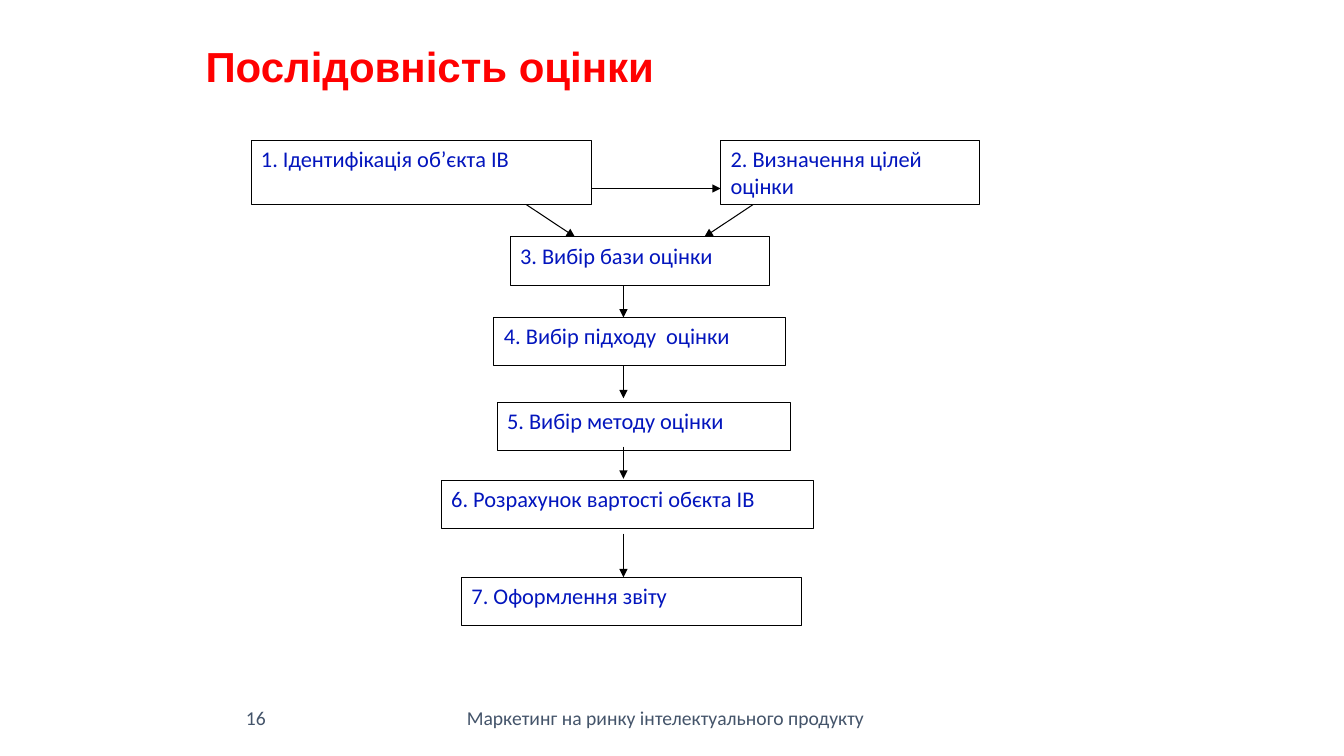
import pptx
import pptx.util
import pptx.dml.color
import pptx.enum.shapes
import pptx.enum.text
import pptx.oxml.ns
import lxml.etree

Inches, Pt = pptx.util.Inches, pptx.util.Pt
ALIGN = pptx.enum.text.PP_ALIGN
ANCHOR = pptx.enum.text.MSO_ANCHOR

WIDTH, HEIGHT = 13.33, 7.5
COL, ROW = WIDTH / 83, 0.16      # flowchart grid
LEFT, TOP = 2.49, 1.39           # its origin
BLACK, WHITE, RED, BLUE, SLATE = "000000", "FFFFFF", "FF0000", "0315BD", "44546A"

TITLE = "Послідовність оцінки"
FOOTER = "Маркетинг на ринку інтелектуального продукту"
PAGE = "16"

# text, column, row, columns wide, rows high
STEPS = [
    ("1. Ідентифікація об’єкта ІВ", 0, 0, 21, 4),
    ("2. Визначення цілей оцінки", 29, 0, 16, 4),
    ("3. Вибір бази оцінки", 16, 6, 16, 3),
    ("4. Вибір підходу  оцінки", 15, 11, 18, 3),
    ("5. Вибір методу оцінки", 15.2, 16.25, 18.1, 3),
    ("6. Розрахунок вартості обєкта ІВ", 11.75, 21.1, 23, 3),
    ("7. Оформлення звіту", 13, 27.1, 21, 3),
]
# start column, start row, end column, end row
ARROWS = [(21, 3, 29, 3), (17, 4, 20, 6), (31, 4, 28, 6)]
DOWN_COL = 23
DOWN_ROWS = [(9, 11), (14, 16), (19, 21), (24.4, 27.1)]
ARROWS += [(DOWN_COL, start, DOWN_COL, end) for start, end in DOWN_ROWS]


def rgb(color):
    return pptx.dml.color.RGBColor.from_string(color)


def x(col):
    return Inches(LEFT + col * COL)


def y(row):
    return Inches(TOP + row * ROW)


def write(sp, text, size, color, font="Calibri", bold=False,
          align=ALIGN.LEFT, anchor=ANCHOR.TOP):
    tf = sp.text_frame
    tf.word_wrap = True
    tf.vertical_anchor = anchor
    p = tf.paragraphs[0]
    p.text = text
    p.alignment = align
    p.font.name, p.font.size, p.font.bold = font, Pt(size), bold
    p.font.color.rgb = rgb(color)
    return p


def add_label(s, box, *args, **style):
    sp = s.shapes.add_textbox(*[Inches(v) for v in box])
    return write(sp, *args, **style)


def add_step(s, text, col, row, cols, rows):
    sp = s.shapes.add_shape(pptx.enum.shapes.MSO_SHAPE.RECTANGLE,
                            x(col), y(row), Inches(cols * COL), Inches(rows * ROW))
    sp.shadow.inherit = False
    sp.fill.solid()
    sp.fill.fore_color.rgb = rgb(WHITE)
    sp.line.color.rgb = rgb(BLACK)
    sp.line.width = Pt(0.75)
    write(sp, text, 16, BLUE)


def add_arrow(s, col1, row1, col2, row2):
    line = s.shapes.add_connector(pptx.enum.shapes.MSO_CONNECTOR.STRAIGHT,
                                  x(col1), y(row1), x(col2), y(row2))
    line.line.color.rgb = rgb(BLACK)
    line.line.width = Pt(0.75)
    qn = pptx.oxml.ns.qn
    sppr = line._element.spPr
    lxml.etree.SubElement(sppr.find(qn("a:ln")), qn("a:tailEnd"), type="triangle")
    lxml.etree.SubElement(sppr, qn("a:effectLst"))


def main():
    prs = pptx.Presentation()
    prs.slide_width, prs.slide_height = Inches(WIDTH), Inches(HEIGHT)
    s = prs.slides.add_slide(prs.slide_layouts[6])

    title = add_label(s, (1.94, 0.21, 9.73, 0.94), TITLE, 30, RED,
                      font="Arial", bold=True, anchor=ANCHOR.MIDDLE)
    title.line_spacing = 0.9
    add_label(s, (3.99, 6.95, 4.68, 0.4), FOOTER, 14, SLATE, align=ALIGN.RIGHT)
    add_label(s, (2.34, 6.95, 2.17, 0.4), PAGE, 14, SLATE)

    for step in STEPS:
        add_step(s, *step)
    for arrow in ARROWS:
        add_arrow(s, *arrow)
    prs.save("out.pptx")


if __name__ == "__main__":
    main()
